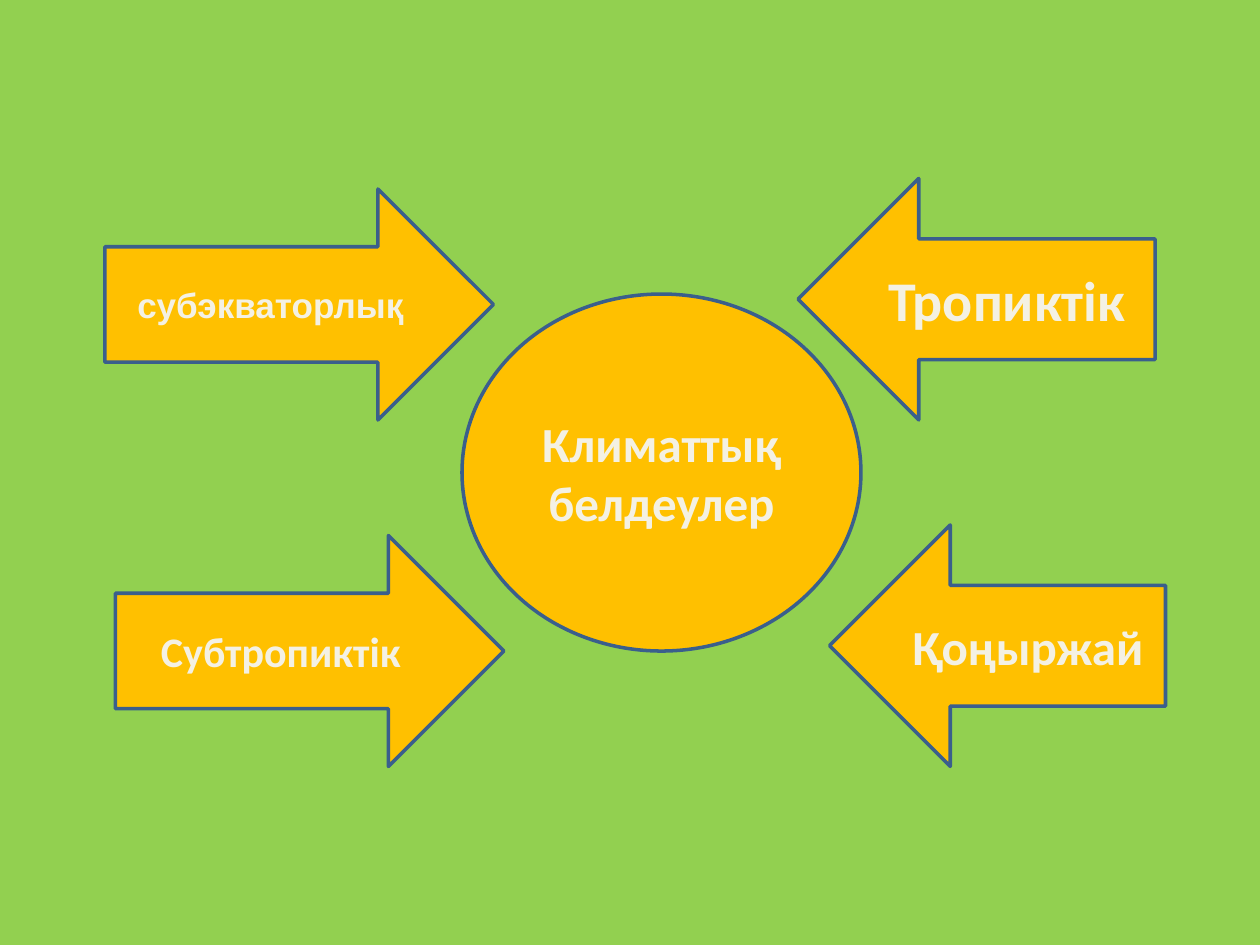
from dataclasses import dataclass

from lxml import etree
from pptx import Presentation
from pptx.dml.color import RGBColor
from pptx.enum.shapes import MSO_SHAPE
from pptx.enum.text import MSO_ANCHOR, PP_ALIGN
from pptx.oxml.ns import qn
from pptx.util import Emu, Pt

OVAL = MSO_SHAPE.OVAL
RIGHT_ARROW = MSO_SHAPE.RIGHT_ARROW
LEFT_ARROW = MSO_SHAPE.LEFT_ARROW
MIDDLE = MSO_ANCHOR.MIDDLE
CENTER = PP_ALIGN.CENTER

EMU_PER_PX = 9525  # 96 px to the inch
BLANK_LAYOUT = 6


@dataclass(frozen=True)
class Theme:
    background: str = "92D050"
    fill: str = "FFC000"
    line: str = "3A5F8C"
    text: str = "F4F1E3"
    text_outline: str = "054697"
    font: str = "Calibri"
    alternate_font: str = "Arial"
    line_width: int = 2
    outline_width: int = 1
    small: int = 20
    medium: int = 24
    large: int = 28
    extra_large: int = 32


THEME = Theme()


def px(length):
    return Emu(length * EMU_PER_PX)


def color(value):
    return RGBColor.from_string(value)


def outline_text(paragraph):
    """Give the paragraph's letters a thin outline."""
    properties = paragraph._p.get_or_add_pPr().get_or_add_defRPr()
    line = etree.Element(qn("a:ln"), w=str(Pt(THEME.outline_width)))
    fill = etree.SubElement(line, qn("a:solidFill"))
    etree.SubElement(fill, qn("a:srgbClr"), val=THEME.text_outline)
    properties.insert(0, line)


def write_label(shape, text, size, font_name):
    frame = shape.text_frame
    frame.word_wrap = True
    frame.vertical_anchor = MIDDLE
    paragraph = frame.paragraphs[0]
    paragraph.text = text
    paragraph.alignment = CENTER
    font = paragraph.font
    font.name = font_name
    font.size = Pt(size)
    font.bold = True
    font.color.rgb = color(THEME.text)
    outline_text(paragraph)


def add_labelled_shape(slide, kind, box, text, size, font_name=THEME.font):
    shape = slide.shapes.add_shape(kind, *map(px, box))
    shape.shadow.inherit = False
    shape.fill.solid()
    shape.fill.fore_color.rgb = color(THEME.fill)
    shape.line.color.rgb = color(THEME.line)
    shape.line.width = Pt(THEME.line_width)
    write_label(shape, text, size, font_name)


def main():
    presentation = Presentation()
    presentation.slide_width = px(960)
    presentation.slide_height = px(720)
    slide = presentation.slides.add_slide(presentation.slide_layouts[BLANK_LAYOUT])
    slide.background.fill.solid()
    slide.background.fill.fore_color.rgb = color(THEME.background)

    add_labelled_shape(slide, OVAL, (352, 224, 304, 272),
                       "Климаттық белдеулер", THEME.large)
    add_labelled_shape(slide, RIGHT_ARROW, (80, 144, 296, 176),
                       "субэкваторлық", THEME.small, THEME.alternate_font)
    add_labelled_shape(slide, RIGHT_ARROW, (88, 408, 296, 176),
                       "Субтропиктік", THEME.medium)
    add_labelled_shape(slide, LEFT_ARROW, (608, 136, 272, 184),
                       "Тропиктік", THEME.extra_large)
    add_labelled_shape(slide, LEFT_ARROW, (632, 400, 256, 184),
                       "Қоңыржай", THEME.large)

    presentation.save("out.pptx")


if __name__ == "__main__":
    main()
